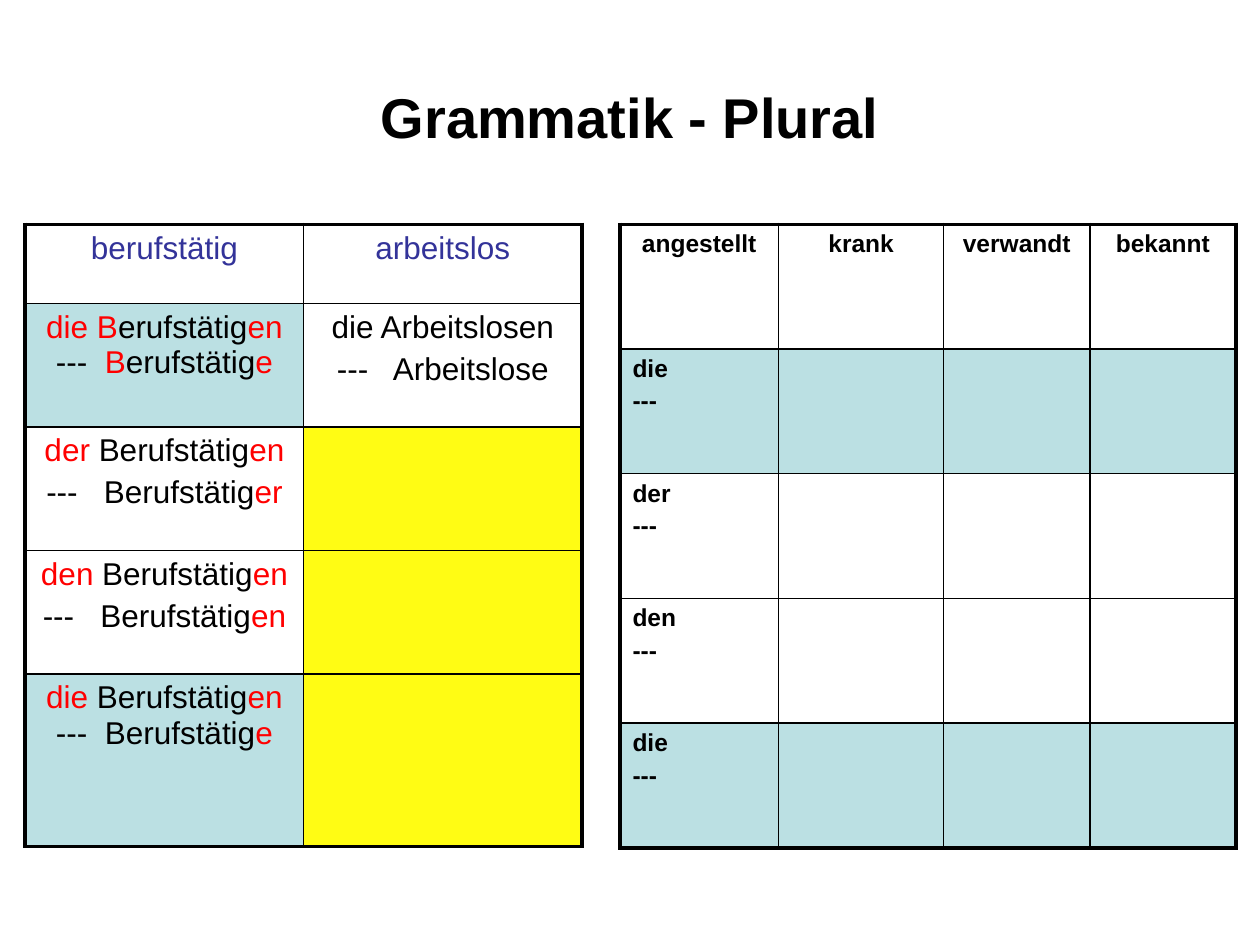
from lxml import etree
from pptx import Presentation
from pptx.dml.color import RGBColor
from pptx.enum.text import MSO_ANCHOR, PP_ALIGN
from pptx.oxml.ns import qn
from pptx.util import Inches, Pt

LEFT, CENTER = PP_ALIGN.LEFT, PP_ALIGN.CENTER
MIDDLE = MSO_ANCHOR.MIDDLE
FONT = "Arial"
THIN, THICK = 1, 2.25
COLORS = {
    "black": "000000",
    "red": "FF0000",
    "navy": "333399",
    "teal": "BBE0E3",
    "yellow": "FFFC14",
}


def write(frame, text, size=18, color="black", bold=False, align=CENTER, gap=0.2):
    for row, line in enumerate(text.split("|")):
        para = frame.paragraphs[0] if row == 0 else frame.add_paragraph()
        para.alignment = align
        para.space_before = Pt(size * gap)
        for part, chunk in enumerate(line.split("*")):
            shade = "red" if part % 2 else color
            for turn, piece in enumerate(chunk.split("\n")):
                if turn:
                    para.add_line_break()
                if not piece:
                    continue
                run = para.add_run()
                run.text = piece
                run.font.name = FONT
                run.font.size = Pt(size)
                run.font.bold = bold
                run.font.color.rgb = RGBColor.from_string(COLORS[shade])


class Deck:
    def __init__(self, width, height):
        self.show = Presentation()
        self.show.slide_width = Inches(width)
        self.show.slide_height = Inches(height)
        self.slide = self.show.slides.add_slide(self.show.slide_layouts[6])

    def title(self, text, box, **style):
        frame = self.slide.shapes.add_textbox(*map(Inches, box)).text_frame
        frame.word_wrap = True
        frame.vertical_anchor = MIDDLE
        write(frame, text, **style)

    def border(self, cell, sides):
        props = cell._tc.get_or_add_tcPr()
        for side in "LRTB":
            width = THICK if side in sides else THIN
            line = etree.SubElement(props, qn(f"a:ln{side}"), w=str(Pt(width)))
            fill = etree.SubElement(line, qn("a:solidFill"))
            etree.SubElement(fill, qn("a:srgbClr"), val=COLORS["black"])

    def table(self, left, top, cols, rows, texts, fills, head, body):
        box = map(Inches, (left, top, sum(cols), sum(rows)))
        grid = self.slide.shapes.add_table(len(rows), len(cols), *box).table
        grid.first_row = grid.horz_banding = False
        for col, width in zip(grid.columns, cols):
            col.width = Inches(width)
        for row, height in zip(grid.rows, rows):
            row.height = Inches(height)
        for y in range(len(rows)):
            for x in range(len(cols)):
                cell = grid.cell(y, x)
                edges = {"L": x == 0, "R": x == len(cols) - 1,
                         "T": y == 0, "B": y == len(rows) - 1}
                self.border(cell, [side for side, edge in edges.items() if edge])
                if fills[y][x]:
                    cell.fill.solid()
                    cell.fill.fore_color.rgb = RGBColor.from_string(COLORS[fills[y][x]])
                else:
                    cell.fill.background()
                if texts[y][x]:
                    write(cell.text_frame, texts[y][x], **(body if y else head))

    def save(self):
        self.show.save("out.pptx")


def main():
    deck = Deck(10, 7.5)
    deck.title("Grammatik - Plural", (0.5, 0.3, 9, 1.25), size=32, bold=True, gap=0)

    top = 1.78
    words = [
        ("berufstätig", "arbeitslos"),
        ("*die B*erufstätig*en*\n---  *B*erufstätig*e*",
         "die Arbeitslosen|---   Arbeitslose"),
        ("*der* Berufstätig*en*|---   Berufstätig*er*", ""),
        ("*den* Berufstätig*en*|---   Berufstätig*en*", ""),
        ("*die* Berufstätig*en*\n---  Berufstätig*e*", ""),
    ]
    fills = [(None, None), ("teal", None), (None, "yellow"),
             (None, "yellow"), ("teal", "yellow")]
    deck.table(0.2, top, [2.21] * 2, [0.63, 0.98, 0.98, 0.98, 1.37],
               words, fills, {"color": "navy"}, {})

    forms = [("angestellt", "krank", "verwandt", "bekannt")]
    forms += [(f"{word}|---", "", "", "") for word in ("die", "der", "den", "die")]
    bands = [[band] * 4 for band in (None, "teal", None, None, "teal")]
    bold = {"size": 14, "bold": True}
    deck.table(4.92, top, [1.26, 1.31, 1.16, 1.16], [0.99] * 5,
               forms, bands, bold, {**bold, "align": LEFT})
    deck.save()


if __name__ == "__main__":
    main()
